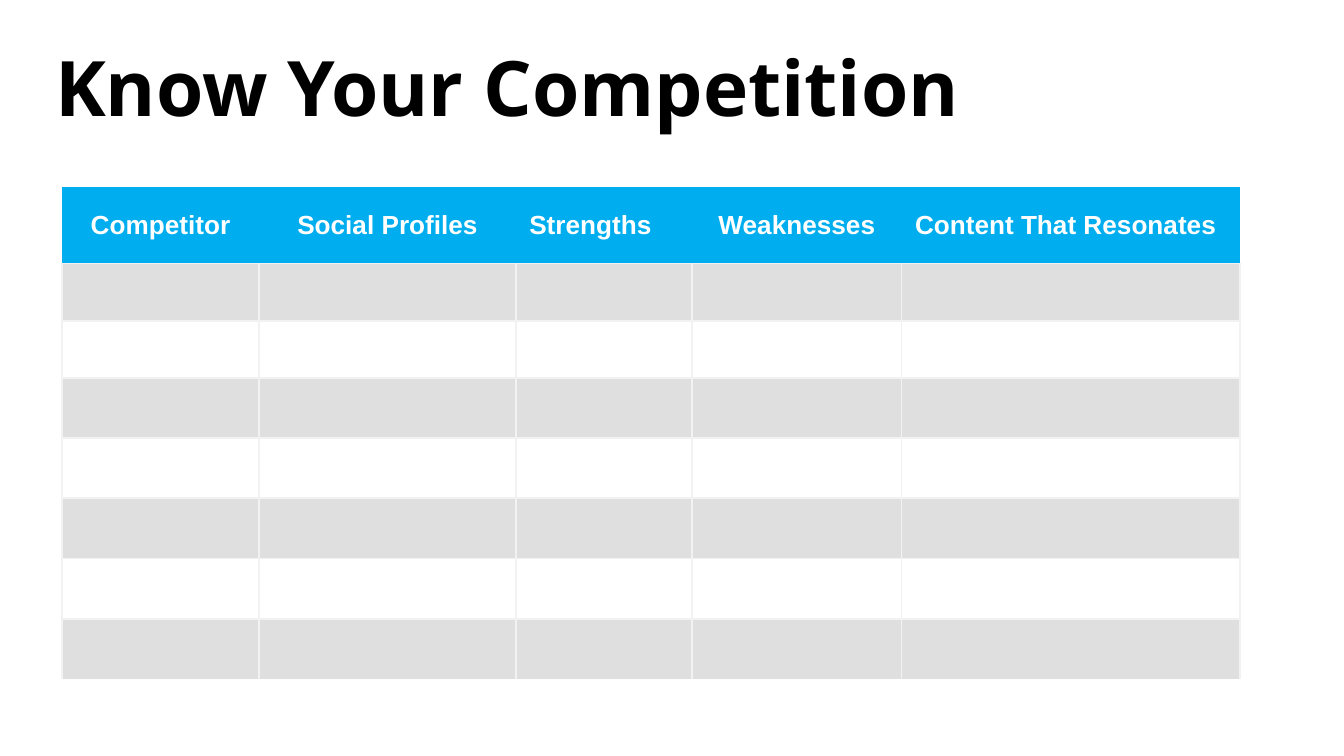
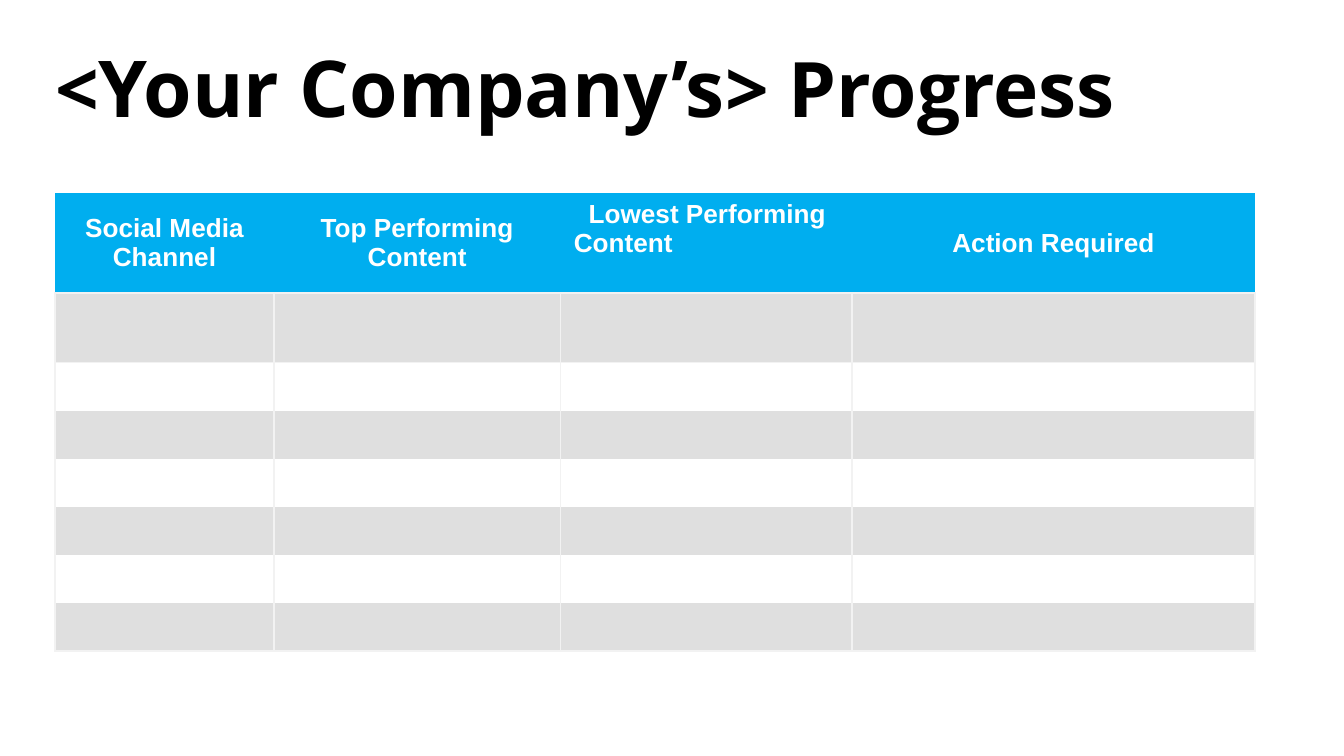
from lxml.etree import SubElement
from pptx import Presentation
from pptx.dml.color import RGBColor
from pptx.enum.text import MSO_ANCHOR as Anchor, MSO_AUTO_SIZE as AutoSize, PP_ALIGN as Align
from pptx.oxml.ns import qn
from pptx.util import Cm, Pt

BLACK = RGBColor(0x00, 0x00, 0x00)
WHITE = RGBColor(0xFF, 0xFF, 0xFF)
BLUE = RGBColor(0x00, 0xAE, 0xEF)
GREY = RGBColor(0xDF, 0xDF, 0xDF)
RULE = RGBColor(0xF2, 0xF2, 0xF2)
PLAIN_GRID = "{2D5ABB26-0587-4C30-8999-92F81FD0307C}"

PAGES = [
    {
        "title": [("Know Your Competition", 41)],
        "left": 1.17, "top": 3.53,
        "widths": [3.73, 4.85, 3.33, 3.96, 6.4],
        "heights": [1.45, 1.09, 1.07] + [1.14] * 5,
        "headers": ["Competitor", "Social Profiles", "Strengths",
                    "Weaknesses", "Content That Resonates"],
        "left_aligned": ["Strengths", "Content That Resonates"],
        "first_sides": "LRTB", "inner_sides": "LRTB", "last_sides": "LRT",
    },
    {
        "title": [("<", 41), ("Your Company’s", 42), ("> Progress", 41)],
        "left": 1.04, "top": 3.65,
        "widths": [4.14, 5.41, 5.51, 7.62],
        "heights": [1.89, 1.31] + [0.91] * 6,
        "headers": ["Social Media Channel", "Top Performing Content",
                    "Lowest Performing Content", "Action Required"],
        "left_aligned": ["Lowest Performing Content"],
        "first_sides": "LRT", "inner_sides": "LR", "last_sides": "LRB",
    },
]


def style_cell(cell, color, sides):
    properties = cell._tc.get_or_add_tcPr()
    for side in sides:
        line = SubElement(properties, qn(f"a:ln{side}"), w=str(Pt(1)))
        fill = SubElement(line, qn("a:solidFill"))
        SubElement(fill, qn("a:srgbClr"), val=str(RULE))
    cell.fill.solid()
    cell.fill.fore_color.rgb = color
    cell.vertical_anchor = Anchor.MIDDLE


def set_font(para, name, size, color):
    para.font.name = name
    para.font.size = Pt(size)
    para.font.bold = True
    para.font.color.rgb = color


deck = Presentation()
deck.slide_width, deck.slide_height = Cm(25.4), Cm(14.29)

for content in PAGES:
    page = deck.slides.add_slide(deck.slide_layouts[5])

    title = page.shapes.title
    title.left, title.top, title.width, title.height = Cm(1.04), Cm(0.91), Cm(23.44), Cm(1.65)
    frame = title.text_frame
    frame.auto_size = AutoSize.NONE
    frame.word_wrap = True
    frame.vertical_anchor = Anchor.MIDDLE
    frame.margin_left = frame.margin_right = 0
    frame.margin_top = frame.margin_bottom = Cm(0.25)
    para = frame.paragraphs[0]
    para.alignment = Align.LEFT
    para.line_spacing = 0.9
    set_font(para, "Open Sans", 41, BLACK)
    for text, size in content["title"]:
        span = para.add_run()
        span.text = text
        if size != 41:
            span.font.size = Pt(size)

    widths, heights = content["widths"], content["heights"]
    table = page.shapes.add_table(
        len(heights), len(widths), Cm(content["left"]), Cm(content["top"]),
        Cm(sum(widths)), Cm(sum(heights))).table
    table._tbl.tblPr.find(qn("a:tableStyleId")).text = PLAIN_GRID
    for column, width in zip(table.columns, widths):
        column.width = Cm(width)
    for row, height in zip(table.rows, heights):
        row.height = Cm(height)

    for cell, header in zip(table.rows[0].cells, content["headers"]):
        style_cell(cell, BLUE, "B")
        cell.text = header
        para = cell.text_frame.paragraphs[0]
        para.alignment = Align.LEFT if header in content["left_aligned"] else Align.CENTER
        set_font(para, "Arial", 14, WHITE)
        if header == "Lowest Performing Content":
            cell.vertical_anchor = Anchor.TOP
            para._p.get_or_add_pPr().set("indent", str(Cm(0.28)))

    last = len(heights) - 1
    for number in range(1, len(heights)):
        sides = {1: content["first_sides"], last: content["last_sides"]}.get(
            number, content["inner_sides"])
        for cell in table.rows[number].cells:
            style_cell(cell, GREY if number % 2 else WHITE, sides)
            cell.margin_top = cell.margin_bottom = 0

deck.save("out.pptx")
